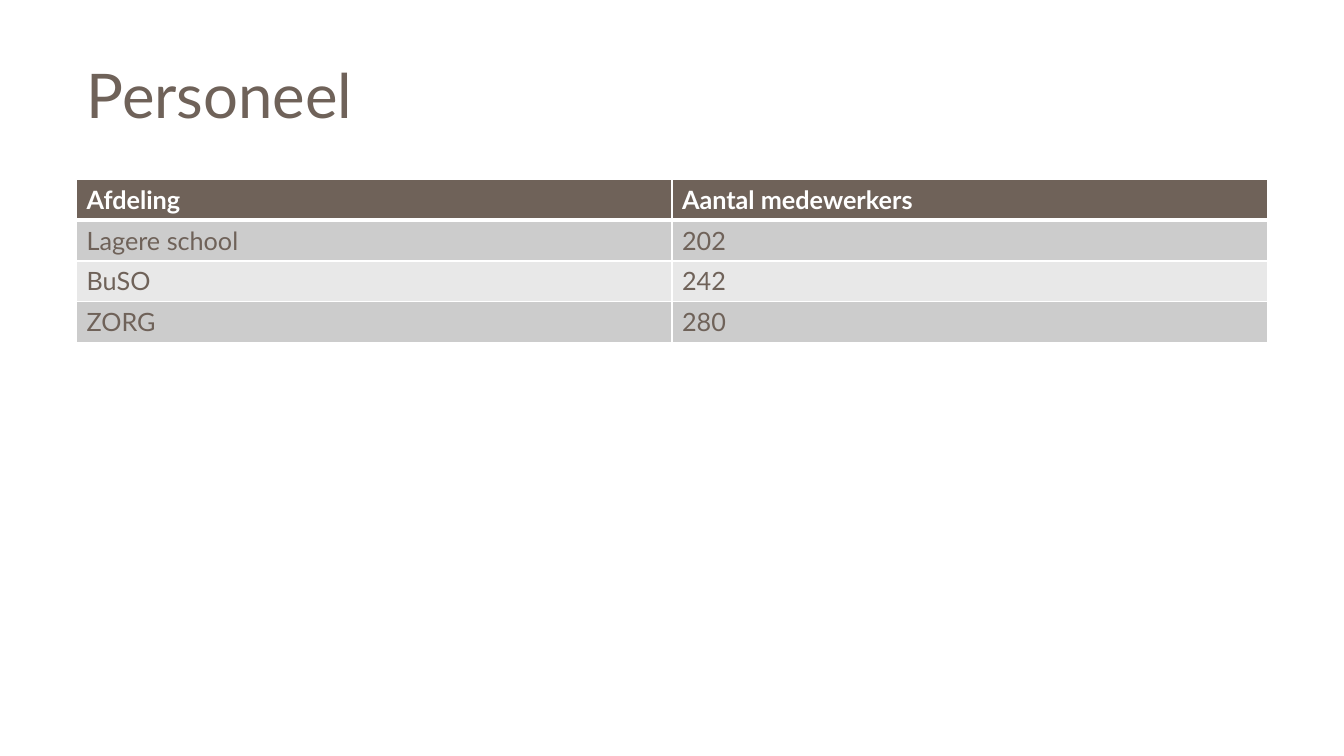
import pptx
import pptx.dml.color
import pptx.enum.text
import pptx.oxml
import pptx.util
from pptx.util import Inches

# Content
TITLE = "Personeel"
ROWS = [
    ("Afdeling", "Aantal medewerkers"),
    ("Lagere school", "202"),
    ("BuSO", "242"),
    ("ZORG", "280"),
]

# Style
FONT = "Lato"
COLORS = {"brown": "6F6259", "white": "FFFFFF", "odd": "CCCCCC", "even": "E8E8E8"}
LEFT, WIDTH = 0.76, 11.81
TITLE_TOP, TABLE_TOP = 0.6, 1.78
ROW_HEIGHT = 0.405
DRAWING = "http://schemas.openxmlformats.org/drawingml/2006/main"


def rgb(name):
    return pptx.dml.color.RGBColor.from_string(COLORS[name])


def write_text(text_frame, text, size=18, color="brown", bold=False, spacing=None):
    paragraph = text_frame.paragraphs[0]
    paragraph.alignment = pptx.enum.text.PP_ALIGN.LEFT
    if spacing:
        paragraph.line_spacing = spacing
    run = paragraph.add_run()
    run.text = text
    run.font.name = FONT
    run.font.size = pptx.util.Pt(size)
    run.font.bold = bold
    run.font.color.rgb = rgb(color)


def set_borders(cell, **widths):
    """Draw white borders; the line elements come before the cell's fill."""
    properties = cell._tc.get_or_add_tcPr()
    for index, side in enumerate("LRTB"):
        width = pptx.util.Pt(widths.get(side, 1))
        properties.insert(index, pptx.oxml.parse_xml(
            f'<a:ln{side} xmlns:a="{DRAWING}" w="{width}"><a:solidFill>'
            f'<a:srgbClr val="{COLORS["white"]}"/></a:solidFill></a:ln{side}>'))


presentation = pptx.Presentation()
presentation.slide_width = Inches(13.33)
presentation.slide_height = Inches(7.5)
slide = presentation.slides.add_slide(presentation.slide_layouts[5])

# Title
title = slide.shapes.title
title.left, title.top = Inches(LEFT), Inches(TITLE_TOP)
title.width, title.height = Inches(WIDTH), Inches(TABLE_TOP - TITLE_TOP)
title.text_frame.vertical_anchor = pptx.enum.text.MSO_ANCHOR.TOP
title.text_frame.word_wrap = True
write_text(title.text_frame, TITLE, size=44, spacing=0.9)

# Staff table
table = slide.shapes.add_table(
    len(ROWS), len(ROWS[0]), Inches(LEFT), Inches(TABLE_TOP),
    Inches(WIDTH), Inches(ROW_HEIGHT * len(ROWS))).table
for row_index, row in enumerate(ROWS):
    header = row_index == 0
    fill = "brown" if header else ("odd" if row_index % 2 else "even")
    for column_index, text in enumerate(row):
        cell = table.cell(row_index, column_index)
        cell.fill.solid()
        cell.fill.fore_color.rgb = rgb(fill)
        set_borders(cell, T=3 if row_index == 1 else 1, B=3 if header else 1)
        write_text(cell.text_frame, text, bold=header,
                   color="white" if header else "brown")

presentation.save("out.pptx")
